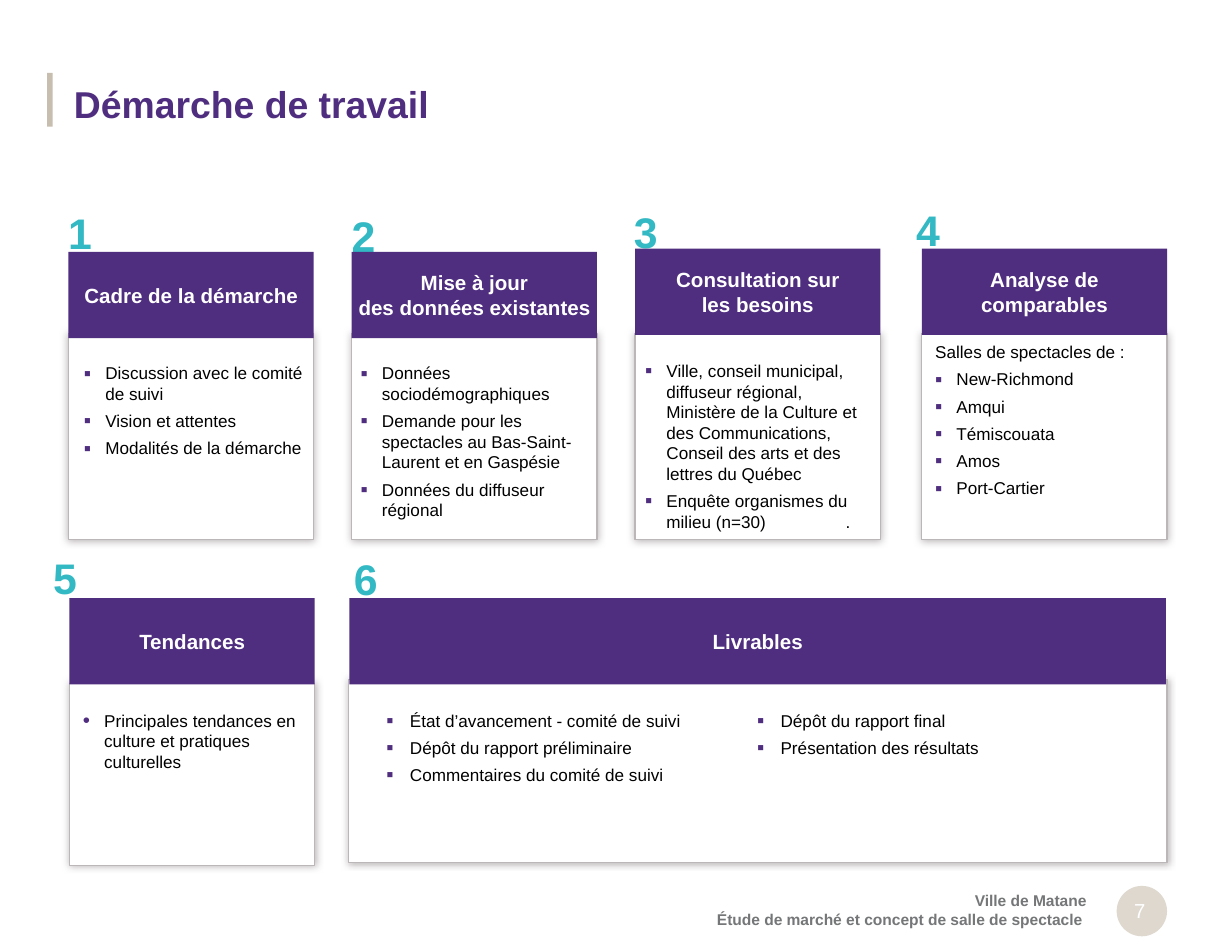
from dataclasses import dataclass

from lxml.etree import SubElement
from pptx import Presentation
from pptx.dml.color import RGBColor
from pptx.enum.shapes import MSO_SHAPE
from pptx.enum.text import MSO_ANCHOR, PP_ALIGN
from pptx.oxml.ns import qn
from pptx.util import Inches, Pt


@dataclass(frozen=True)
class Theme:
    font: str = "Arial"
    purple: str = "4F2D7F"
    teal: str = "33B9C4"
    sand: str = "C8BEAF"
    pale_sand: str = "DED8CF"
    edge: str = "BBB6B7"
    grey: str = "747678"
    white: str = "FFFFFF"
    black: str = "000000"
    title_size: float = 24
    number_size: float = 27.5
    header_size: float = 13.2
    body_size: float = 11
    footer_size: float = 10
    page_size: float = 13


@dataclass(frozen=True)
class Box:
    left: float
    top: float
    width: float
    height: float

    def lengths(self):
        return [Inches(n) for n in (self.left, self.top, self.width, self.height)]

    def turned(self):
        """The unrotated frame of a shape that fills this box after a quarter turn."""
        shift = (self.width - self.height) / 2
        return Box(self.left + shift, self.top - shift, self.height, self.width)


@dataclass(frozen=True)
class TextList:
    box: Box
    items: tuple
    intro: str = ""
    bullet: str = "▪"
    margin: float = 0.22
    hanging: float = 0.19


@dataclass(frozen=True)
class Card:
    number: str
    number_at: tuple
    title: str
    header: Box
    body: Box
    lists: tuple


THEME = Theme()
NUMBER_SIZE = (0.77, 0.56)
HEADER_HEIGHT = 0.77
CARD_WIDTH = 2.19
BODY_TOP, BODY_HEIGHT = 2.98, 1.84
LOWER_TOP, LOWER_HEIGHT = 5.34, 1.63


def upper_card(number, number_at, title, left, top, text_list):
    return Card(number, number_at, title, Box(left, top, CARD_WIDTH, HEADER_HEIGHT),
                Box(left, BODY_TOP, CARD_WIDTH, BODY_HEIGHT), (text_list,))


CARDS = (
    upper_card("1", (0.33, 1.8), "Cadre de la démarche", 0.61, 2.25, TextList(
        Box(0.67, 3.19, 2.13, 1.45),
        ("Discussion avec le comité de suivi", "Vision et attentes", "Modalités de la démarche"))),
    upper_card("2", (2.86, 1.82), "Mise à jour\ndes données existantes", 3.14, 2.25, TextList(
        Box(3.14, 3.19, 2.17, 1.4),
        ("Données sociodémographiques",
         "Demande pour les spectacles au Bas-Saint-Laurent et en Gaspésie",
         "Données du diffuseur régional"))),
    upper_card("3", (5.38, 1.79), "Consultation sur\nles besoins", 5.67, 2.22, TextList(
        Box(5.68, 3.17, 2.12, 1.58),
        ("Ville, conseil municipal, diffuseur régional, Ministère de la Culture et "
         "des Communications, Conseil des arts et des lettres du Québec",
         "Enquête organismes du milieu (n=30)\t\t."))),
    upper_card("4", (7.9, 1.77), "Analyse de\ncomparables", 8.23, 2.22, TextList(
        Box(8.27, 3, 2.13, 1.75),
        ("New-Richmond", "Amqui", "Témiscouata", "Amos", "Port-Cartier"),
        intro="Salles de spectacles de :")),
    Card("5\t", (0.34, 4.88), "Tendances",
         Box(0.62, LOWER_TOP, CARD_WIDTH, HEADER_HEIGHT),
         Box(0.62, 6.1, CARD_WIDTH, LOWER_HEIGHT),
         (TextList(Box(0.66, 6.29, 2.11, 1.22),
                   ("Principales tendances en culture et pratiques culturelles",), bullet="•"),)),
    Card("6", (2.88, 4.89), "Livrables",
         Box(3.12, LOWER_TOP, 7.29, HEADER_HEIGHT),
         Box(3.11, 6.07, 7.31, LOWER_HEIGHT),
         (TextList(Box(3.37, 6.29, 3.37, 1.14),
                   ("État d’avancement - comité de suivi", "Dépôt du rapport préliminaire",
                    "Commentaires du comité de suivi"), margin=0.24, hanging=0.21),
          TextList(Box(6.68, 6.29, 3.63, 1.14),
                   ("Dépôt du rapport final", "Présentation des résultats"),
                   margin=0.24, hanging=0.21))),
)


def set_frame(frame, margins, anchor=MSO_ANCHOR.TOP):
    values = {"word_wrap": True, "vertical_anchor": anchor}
    sides = ("margin_left", "margin_top", "margin_right", "margin_bottom")
    values.update(zip(sides, (Inches(margin) for margin in margins)))
    for name, value in values.items():
        setattr(frame, name, value)


def write(para, text, size, color, bold=False, align=PP_ALIGN.LEFT):
    para.alignment = align
    for index, line in enumerate(text.split("\n")):
        if index:
            para.add_line_break()
        span = para.add_run()
        span.text = line
        for name, value in {"name": THEME.font, "size": Pt(size), "bold": bold}.items():
            setattr(span.font, name, value)
        span.font.color.rgb = RGBColor.from_string(color)


def add_label(page, box, text, anchor=MSO_ANCHOR.TOP, **style):
    frame = page.shapes.add_textbox(*box.lengths()).text_frame
    set_frame(frame, (0, 0.05, 0, 0.05), anchor)
    write(frame.paragraphs[0], text, **style)


def add_block(page, kind, box, fill):
    shape = page.shapes.add_shape(kind, *box.lengths())
    shape.shadow.inherit = False
    shape.fill.solid()
    shape.fill.fore_color.rgb = RGBColor.from_string(fill)
    shape.line.fill.background()
    return shape


def add_panel(page, box):
    """White card body with a thin edge and a soft glow of shadow."""
    panel = add_block(page, MSO_SHAPE.PENTAGON, box.turned(), THEME.white)
    panel.rotation = 90
    panel.adjustments[0] = 0
    panel.line.color.rgb = RGBColor.from_string(THEME.edge)
    panel.line.width = Pt(0.75)
    effects = panel._element.spPr.find(qn("a:effectLst"))
    shadow = SubElement(effects, qn("a:outerShdw"), blurRad=str(Pt(5)), dist="0", dir="0",
                        algn="ctr", rotWithShape="0")
    SubElement(shadow, qn("a:srgbClr"), val=THEME.edge)


def add_bullet(para, text_list):
    properties = para._p.get_or_add_pPr()
    properties.set("marL", str(Inches(text_list.margin)))
    properties.set("indent", str(-Inches(text_list.hanging)))
    color = SubElement(properties, qn("a:buClr"))
    SubElement(color, qn("a:srgbClr"), val=THEME.purple)
    SubElement(properties, qn("a:buSzPct"), val="120000")
    SubElement(properties, qn("a:buFont"), typeface=THEME.font)
    SubElement(properties, qn("a:buChar"), char=text_list.bullet)


def add_list(page, text_list):
    frame = page.shapes.add_textbox(*text_list.box.lengths()).text_frame
    set_frame(frame, (0.05, 0.05, 0.03, 0.05))
    lines = ((text_list.intro,) if text_list.intro else ()) + text_list.items
    for index, line in enumerate(lines):
        para = frame.add_paragraph() if index else frame.paragraphs[0]
        if line == text_list.intro:
            para._p.get_or_add_pPr().set("marL", str(Inches(0.03)))
        else:
            add_bullet(para, text_list)
        para.space_after = Pt(4.3)
        write(para, line, THEME.body_size, THEME.black)


def add_card(page, card):
    add_label(page, Box(*card.number_at, *NUMBER_SIZE), card.number, size=THEME.number_size,
              color=THEME.teal, bold=True, align=PP_ALIGN.CENTER)
    add_panel(page, card.body)
    header = add_block(page, MSO_SHAPE.RECTANGLE, card.header, THEME.purple)
    set_frame(header.text_frame, (0, 0, 0, 0), MSO_ANCHOR.MIDDLE)
    write(header.text_frame.paragraphs[0], card.title, THEME.header_size, THEME.white,
          bold=True, align=PP_ALIGN.CENTER)
    for text_list in card.lists:
        add_list(page, text_list)


def add_title(page, box):
    add_block(page, MSO_SHAPE.RECTANGLE, Box(box.left, box.top, 0.05, 0.48), THEME.sand)
    add_label(page, Box(box.left + 0.24, box.top, box.width - 0.24, box.height),
              "Démarche de travail", MSO_ANCHOR.MIDDLE, size=THEME.title_size,
              color=THEME.purple, bold=True)


def add_footer(page, box):
    add_label(page, Box(box.left, box.top, 4.7, 0.44),
              "Ville de Matane\nÉtude de marché et concept de salle de spectacle ",
              size=THEME.footer_size, color=THEME.grey, bold=True, align=PP_ALIGN.RIGHT)
    right = box.left + box.width
    add_block(page, MSO_SHAPE.OVAL, Box(right - 0.45, box.top, 0.45, 0.45), THEME.pale_sand)
    add_label(page, Box(right - 0.55, box.top + 0.06, 0.61, 0.27), "7", size=THEME.page_size,
              color=THEME.white, align=PP_ALIGN.CENTER)


def main():
    deck = Presentation()
    deck.slide_width, deck.slide_height = Inches(11), Inches(8.5)
    page = deck.slides.add_slide(deck.slide_layouts[6])
    add_title(page, Box(0.42, 0.65, 9.99, 0.55))
    for card in CARDS:
        add_card(page, card)
    add_footer(page, Box(5, 7.91, 5.42, 0.45))
    deck.save("out.pptx")


if __name__ == "__main__":
    main()
